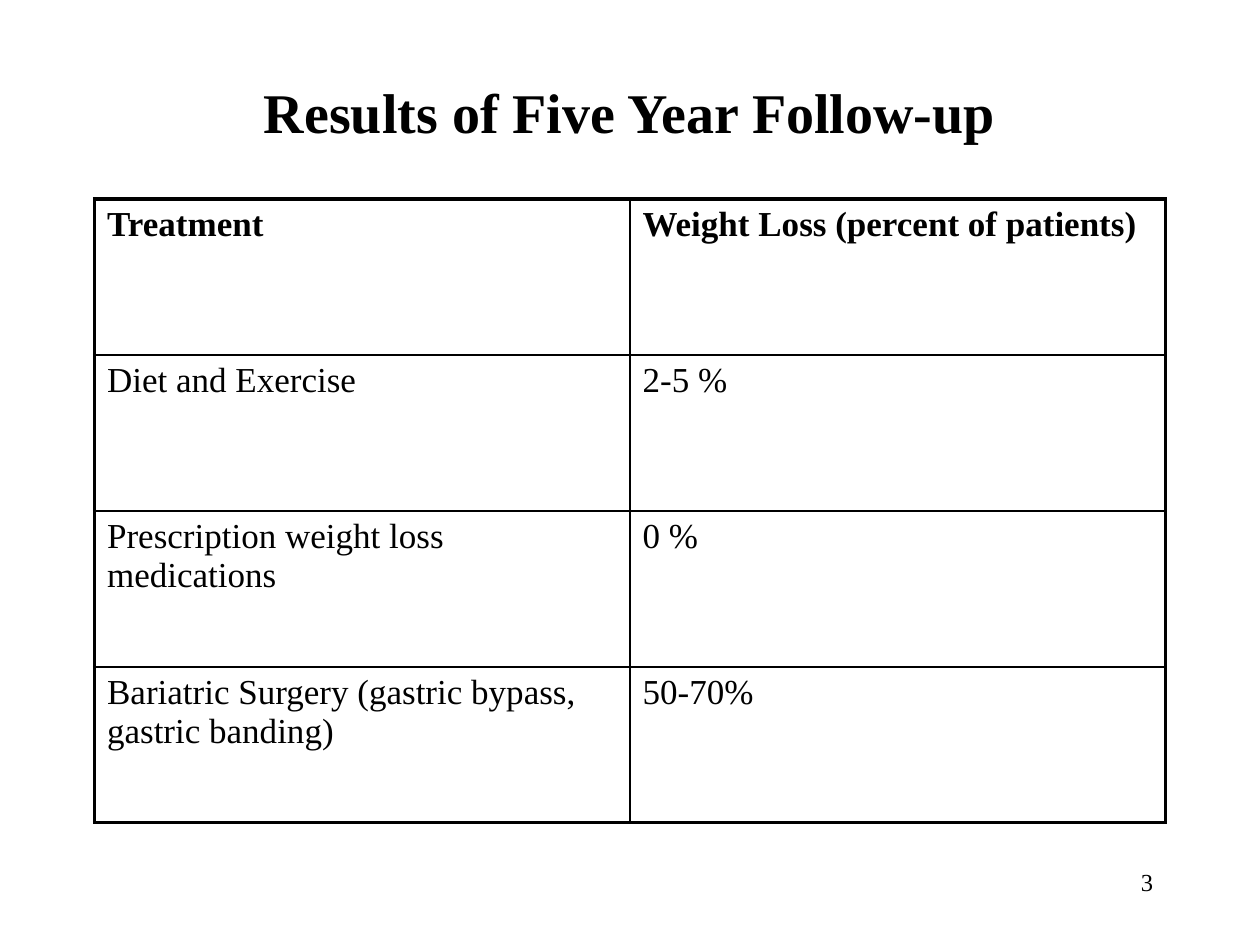
from lxml import etree
from pptx import Presentation
from pptx.dml.color import RGBColor
from pptx.enum.text import MSO_ANCHOR, PP_ALIGN
from pptx.oxml.ns import qn
from pptx.util import Inches, Pt

CENTER, RIGHT, LEFT = PP_ALIGN.CENTER, PP_ALIGN.RIGHT, PP_ALIGN.LEFT
TOP, MIDDLE = MSO_ANCHOR.TOP, MSO_ANCHOR.MIDDLE
FONT = "Times New Roman"
BLACK = "000000"
OUTER, INNER = 2.25, 1

ROWS = [
    ("Treatment", "Weight Loss (percent of patients)"),
    ("Diet and Exercise", "2-5 %"),
    ("Prescription weight loss medications", "0 %"),
    ("Bariatric Surgery (gastric bypass, gastric banding)", "50-70%"),
]


def rgb(color):
    return RGBColor.from_string(color)


def write(tf, text, size, bold=False, align=LEFT):
    p = tf.paragraphs[0]
    p.alignment = align
    r = p.add_run()
    r.text = text
    r.font.name = FONT
    r.font.size = Pt(size)
    r.font.bold = bold
    r.font.color.rgb = rgb(BLACK)


def add_text(slide, box, text, size, bold=False, align=LEFT, anchor=TOP):
    tf = slide.shapes.add_textbox(*map(Inches, box)).text_frame
    tf.word_wrap = True
    tf.vertical_anchor = anchor
    write(tf, text, size, bold, align)


def set_border(cell, side, width):
    tc_pr = cell._tc.get_or_add_tcPr()
    ln = etree.SubElement(tc_pr, qn(f"a:ln{side}"), w=str(Pt(width)))
    fill = etree.SubElement(ln, qn("a:solidFill"))
    etree.SubElement(fill, qn("a:srgbClr"), val=BLACK)


def add_grid(slide, box, rows):
    last_row, last_col = len(rows) - 1, len(rows[0]) - 1
    frame = slide.shapes.add_table(len(rows), len(rows[0]), *map(Inches, box))
    table = frame.table
    table.first_row = table.horz_banding = False
    for i, row in enumerate(rows):
        for j, text in enumerate(row):
            cell = table.cell(i, j)
            write(cell.text_frame, text, 20, bold=i == 0)
            # Heavy frame around the table, thin rules inside
            edges = {"L": j == 0, "R": j == last_col, "T": i == 0, "B": i == last_row}
            for side, is_outer in edges.items():
                set_border(cell, side, OUTER if is_outer else INNER)
            cell.fill.background()


def main():
    prs = Presentation()
    prs.slide_width, prs.slide_height = Inches(10), Inches(7.5)
    slide = prs.slides.add_slide(prs.slide_layouts[6])

    # Slide number
    add_text(slide, (7.17, 6.83, 2.08, 0.5), "3", 14, align=RIGHT)
    # Title
    add_text(slide, (0.75, 0.42, 8.5, 0.92), "Results of Five Year Follow-up", 32,
             bold=True, align=CENTER, anchor=MIDDLE)
    # Results table
    add_grid(slide, (0.75, 1.58, 8.5, 4.95), ROWS)

    prs.save("out.pptx")


if __name__ == "__main__":
    main()
